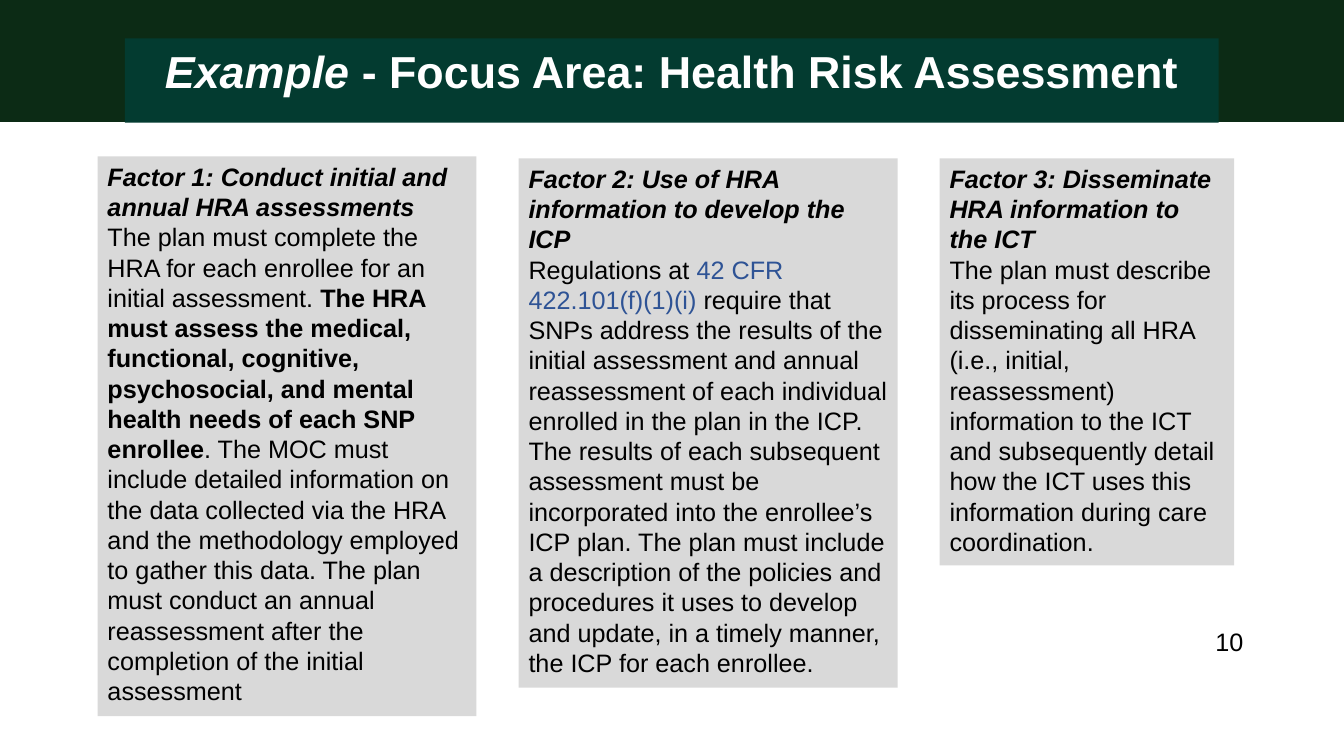
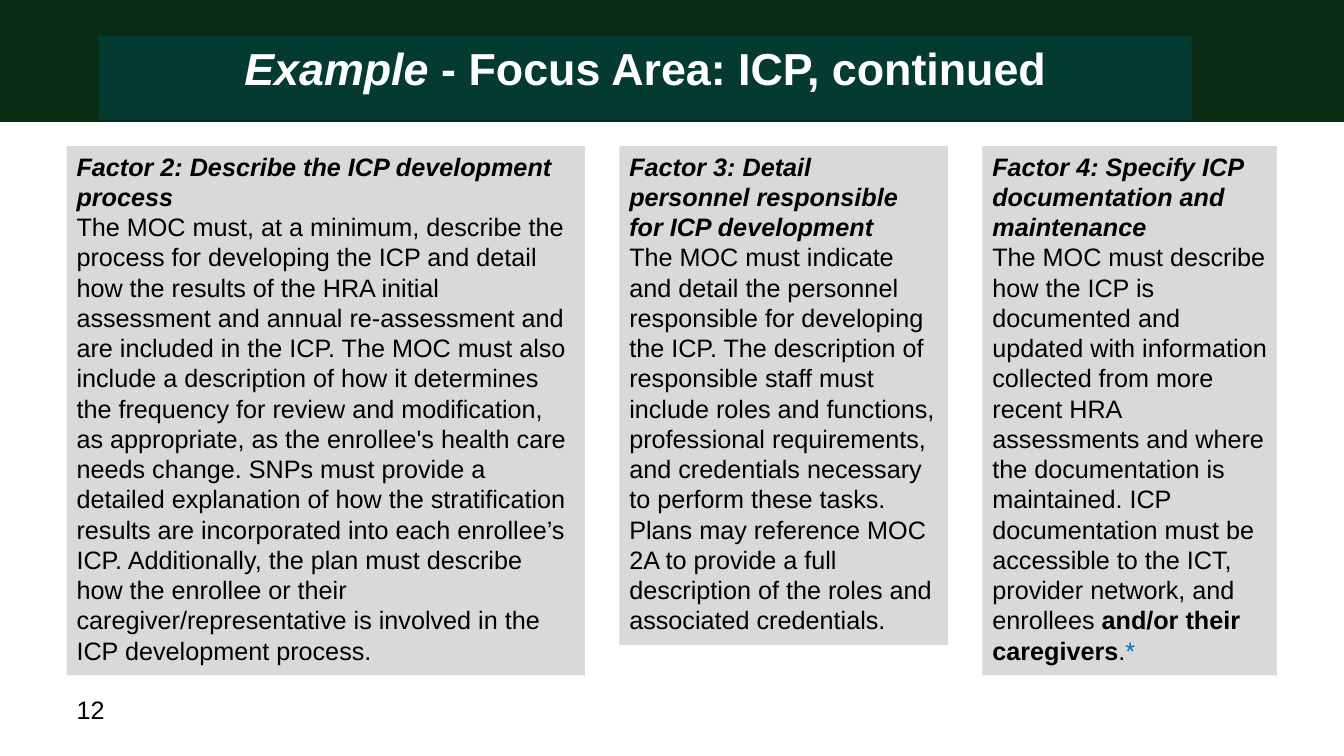
from dataclasses import dataclass

import pptx
import pptx.dml.color
import pptx.enum.shapes
import pptx.enum.text
import pptx.util
from pptx.util import Cm


# Theme
@dataclass(frozen=True)
class Theme:
    font: str = "Arial"
    band: str = "0C2B15"
    title_fill: str = "033B30"
    title_text: str = "FFFFFF"
    panel: str = "D9D9D9"
    text: str = "000000"
    citation: str = "2E5395"
    footnote: str = "006FC0"
    title_size: int = 32
    text_size: int = 18


THEME = Theme()
SLIDE_WIDTH, SLIDE_HEIGHT = 33.87, 19.05
BAND_HEIGHT = 3.07
TITLE_WIDTH, TITLE_HEIGHT = 27.56, 1.63
LINE_HEIGHT, PANEL_PADDING = 0.77, 0.25


# Content types; all lengths are in centimetres
@dataclass(frozen=True)
class Span:
    text: str
    bold: bool = False
    color: str = ""


@dataclass(frozen=True)
class Factor:
    heading: str
    body: tuple[Span, ...]
    width: float
    top: float
    lines: int


@dataclass(frozen=True)
class FocusArea:
    subject: str
    title_at: tuple[float, float]
    left: float
    gap: float
    factors: tuple[Factor, ...]
    page: str
    page_at: tuple[float, float]


FOCUS_AREAS = (
    FocusArea(
        "Health Risk Assessment", (3.15, 0.97), 2.46, 1.06,
        (
            Factor(
                "Factor 1: Conduct initial and annual HRA assessments",
                (
                    Span("The plan must complete the HRA for each enrollee for an initial "
                         "assessment. "),
                    Span("The HRA must assess the medical, functional, cognitive, "
                         "psychosocial, and mental health needs of each SNP enrollee",
                         bold=True),
                    Span(". The MOC must include detailed information on the data collected "
                         "via the HRA and the methodology employed to gather this data. The "
                         "plan must conduct an annual reassessment after the completion of "
                         "the initial assessment"),
                ),
                9.55, 3.94, 18),
            Factor(
                "Factor 2: Use of HRA information to develop the ICP",
                (
                    Span("Regulations at "),
                    Span("42 CFR 422.101(f)(1)(i) ", color=THEME.citation),
                    Span("require that SNPs address the results of the initial assessment "
                         "and annual reassessment of each individual enrolled in the plan "
                         "in the ICP. The results of each subsequent assessment must be "
                         "incorporated into the enrollee’s ICP plan. The plan must include "
                         "a description of the policies and procedures it uses to develop "
                         "and update, in a timely manner, the ICP for each enrollee."),
                ),
                9.55, 3.99, 17),
            Factor(
                "Factor 3: Disseminate HRA information to the ICT",
                (
                    Span("The plan must describe its process for disseminating all HRA "
                         "(i.e., initial, reassessment) information to the ICT and "
                         "subsequently detail how the ICT uses this information during "
                         "care coordination."),
                ),
                7.42, 3.99, 13),
        ),
        "10", (30.38, 15.65)),
    FocusArea(
        "ICP, continued", (2.49, 0.9), 1.68, 0.87,
        (
            Factor(
                "Factor 2: Describe the ICP development process",
                (
                    Span("The MOC must, at a minimum, describe the process for developing "
                         "the ICP and detail how the results of the HRA initial assessment "
                         "and annual re-assessment and are included in the ICP. The MOC "
                         "must also include a description of how it determines the "
                         "frequency for review and modification, as appropriate, as the "
                         "enrollee's health care needs change. SNPs must provide a detailed "
                         "explanation of how the stratification results are incorporated "
                         "into each enrollee’s ICP. Additionally, the plan must describe "
                         "how the enrollee or their caregiver/representative is involved "
                         "in the ICP development process."),
                ),
                13.06, 3.68, 17),
            Factor(
                "Factor 3: Detail personnel responsible for ICP development",
                (
                    Span("The MOC must indicate and detail the personnel responsible for "
                         "developing the ICP. The description of responsible staff must "
                         "include roles and functions, professional requirements, and "
                         "credentials necessary to perform these tasks. Plans may reference "
                         "MOC 2A to provide a full description of the roles and associated "
                         "credentials."),
                ),
                8.28, 3.68, 16),
            Factor(
                "Factor 4: Specify ICP documentation and maintenance",
                (
                    Span("The MOC must describe how the ICP is documented and updated with "
                         "information collected from more recent HRA assessments and where "
                         "the documentation is maintained. ICP documentation must be "
                         "accessible to the ICT, provider network, and enrollees "),
                    Span("and/or their caregivers", bold=True),
                    Span("."),
                    Span("*", color=THEME.footnote),
                ),
                7.42, 3.68, 17),
        ),
        "12", (1.68, 17.37)),
)


# Formatting helpers
def rgb(color: str) -> pptx.dml.color.RGBColor:
    return pptx.dml.color.RGBColor.from_string(color)


def fill_with(shape, color: str) -> None:
    shape.fill.solid()
    shape.fill.fore_color.rgb = rgb(color)


def style(paragraph, size: int, color: str) -> None:
    paragraph.font.name = THEME.font
    paragraph.font.size = pptx.util.Pt(size)
    paragraph.font.color.rgb = rgb(color)


def add_run(paragraph, text: str):
    run = paragraph.add_run()
    run.text = text
    return run


# Slide parts
def add_band(slide) -> None:
    """Put the top band on the layout, behind everything the slides hold."""
    band = slide.shapes.add_shape(
        pptx.enum.shapes.MSO_SHAPE.RECTANGLE, 0, 0, Cm(SLIDE_WIDTH), Cm(BAND_HEIGHT))
    fill_with(band, THEME.band)
    band.line.fill.background()
    band.shadow.inherit = False
    band._element.nvSpPr.cNvPr.set("id", "20")
    slide.slide_layout.shapes._spTree.insert(2, band._element)


def set_title(slide, area: FocusArea) -> None:
    title = slide.shapes.title
    title.left, title.top = (Cm(offset) for offset in area.title_at)
    title.width, title.height = Cm(TITLE_WIDTH), Cm(TITLE_HEIGHT)
    fill_with(title, THEME.title_fill)
    frame = title.text_frame
    frame.auto_size = pptx.enum.text.MSO_AUTO_SIZE.SHAPE_TO_FIT_TEXT
    frame.vertical_anchor = pptx.enum.text.MSO_ANCHOR.TOP
    heading = frame.paragraphs[0]
    heading.alignment = pptx.enum.text.PP_ALIGN.CENTER
    style(heading, THEME.title_size, THEME.title_text)
    heading.font.bold = True
    add_run(heading, "Example").font.italic = True
    add_run(heading, f" - Focus Area: {area.subject}")


def add_factor(slide, factor: Factor, left: float) -> None:
    height = PANEL_PADDING + LINE_HEIGHT * factor.lines
    panel = slide.shapes.add_textbox(
        Cm(left), Cm(factor.top), Cm(factor.width), Cm(height))
    fill_with(panel, THEME.panel)
    frame = panel.text_frame
    frame.word_wrap = True
    frame.auto_size = pptx.enum.text.MSO_AUTO_SIZE.SHAPE_TO_FIT_TEXT

    heading = frame.paragraphs[0]
    style(heading, THEME.text_size, THEME.text)
    heading.font.bold = heading.font.italic = True
    add_run(heading, factor.heading)

    body = frame.add_paragraph()
    style(body, THEME.text_size, THEME.text)
    for span in factor.body:
        run = add_run(body, span.text)
        if span.bold:
            run.font.bold = True
        if span.color:
            run.font.color.rgb = rgb(span.color)


def add_page_number(slide, area: FocusArea) -> None:
    left, top = area.page_at
    number = slide.shapes.add_textbox(Cm(left), Cm(top), Cm(2.03), Cm(1.45))
    number.text_frame.word_wrap = True
    paragraph = number.text_frame.paragraphs[0]
    style(paragraph, THEME.text_size, THEME.text)
    add_run(paragraph, area.page)


def main() -> None:
    deck = pptx.Presentation()
    deck.slide_width, deck.slide_height = Cm(SLIDE_WIDTH), Cm(SLIDE_HEIGHT)
    title_only = deck.slide_layouts[5]
    for index, area in enumerate(FOCUS_AREAS):
        slide = deck.slides.add_slide(title_only)
        if index == 0:
            add_band(slide)
        set_title(slide, area)
        left = area.left
        for factor in area.factors:
            add_factor(slide, factor, left)
            left += factor.width + area.gap
        add_page_number(slide, area)
    deck.save("out.pptx")


if __name__ == "__main__":
    main()
